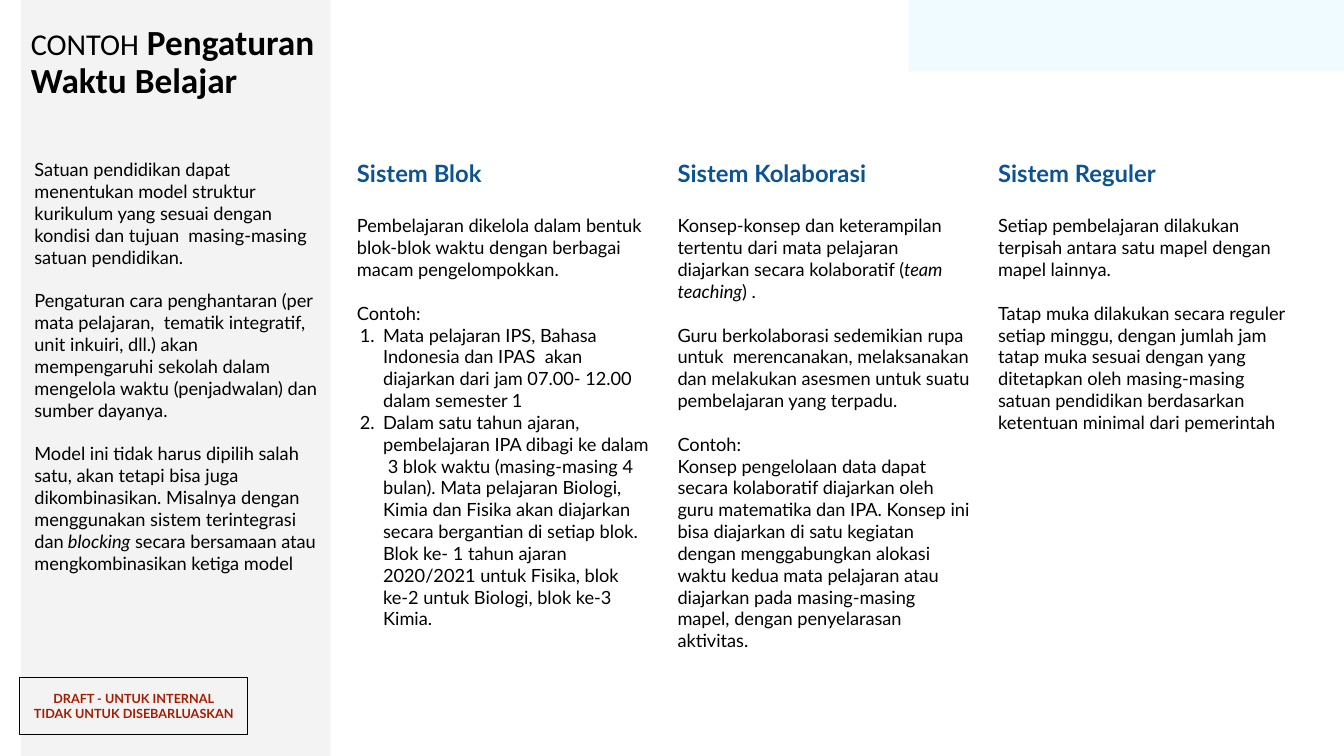
from lxml.etree import SubElement
from pptx import Presentation
from pptx.dml.color import RGBColor
from pptx.enum.shapes import MSO_SHAPE
from pptx.enum.text import MSO_ANCHOR, PP_ALIGN
from pptx.oxml.ns import qn
from pptx.util import Pt

BLACK, BLUE, RED = "000000", "0B5394", "A61C00"
INSET = 9.6
LINE_GAP = 15.6

INTRODUCTION = [
    ["Satuan pendidikan dapat menentukan model struktur kurikulum yang sesuai dengan "
     "kondisi dan tujuan  masing-masing satuan pendidikan."],
    ["Pengaturan cara penghantaran (per mata pelajaran,  tematik integratif, unit inkuiri, dll.) "
     "akan mempengaruhi sekolah dalam mengelola waktu (penjadwalan) dan sumber dayanya."],
    ["Model ini tidak harus dipilih salah satu, akan tetapi bisa juga dikombinasikan. Misalnya "
     "dengan menggunakan sistem terintegrasi dan* blocking* secara bersamaan atau "
     "mengkombinasikan ketiga model"],
]

# Each system holds groups of paragraphs; a tuple is a numbered list.
SYSTEMS = {
    "Sistem Blok": [
        ["Pembelajaran dikelola dalam bentuk blok-blok waktu dengan berbagai macam "
         "pengelompokkan."],
        ["Contoh:",
         ("Mata pelajaran IPS, Bahasa Indonesia dan IPAS  akan diajarkan dari jam 07.00- 12.00 "
          "dalam semester 1",
          "Dalam satu tahun ajaran, pembelajaran IPA dibagi ke dalam  3 blok waktu "
          "(masing-masing 4 bulan). Mata pelajaran Biologi, Kimia dan Fisika akan diajarkan "
          "secara bergantian di setiap blok. Blok ke- 1 tahun ajaran 2020/2021 untuk Fisika, "
          "blok ke-2 untuk Biologi, blok ke-3 Kimia.")],
    ],
    "Sistem Kolaborasi": [
        ["Konsep-konsep dan keterampilan  tertentu dari mata pelajaran diajarkan secara "
         "kolaboratif (*team teaching*) ."],
        ["Guru berkolaborasi sedemikian rupa untuk  merencanakan, melaksanakan dan melakukan "
         "asesmen untuk suatu pembelajaran yang terpadu."],
        ["Contoh:",
         "Konsep pengelolaan data dapat secara kolaboratif diajarkan oleh guru matematika dan "
         "IPA. Konsep ini bisa diajarkan di satu kegiatan dengan menggabungkan alokasi waktu "
         "kedua mata pelajaran atau diajarkan pada masing-masing mapel, dengan penyelarasan "
         "aktivitas."],
    ],
    "Sistem Reguler": [
        ["Setiap pembelajaran dilakukan terpisah antara satu mapel dengan mapel lainnya."],
        ["Tatap muka dilakukan secara reguler setiap minggu, dengan jumlah jam tatap muka sesuai "
         "dengan yang ditetapkan oleh masing-masing satuan pendidikan berdasarkan ketentuan "
         "minimal dari pemerintah"],
    ],
}


def color(value):
    return RGBColor.from_string(value)


def add_number(paragraph):
    properties = paragraph._p.get_or_add_pPr()
    properties.set("marL", str(Pt(18.7)))
    properties.set("indent", str(-Pt(16.6)))
    bullet_color = SubElement(properties, qn("a:buClr"))
    SubElement(bullet_color, qn("a:srgbClr"), val=BLACK)
    SubElement(properties, qn("a:buAutoNum"), type="arabicPeriod")


def write(frame, text, size=13, font="Lato", fill=BLACK, bold=False, align=PP_ALIGN.LEFT,
          gap=0, spacing=None, numbered=False, accent=None):
    """Add a paragraph; parts between asterisks take the accent format (italic by default)."""
    paragraph = frame.paragraphs[0]
    if paragraph.runs:
        paragraph = frame.add_paragraph()
    paragraph.alignment = align
    if gap:
        paragraph.space_before = Pt(gap)
    if spacing:
        paragraph.line_spacing = spacing
    if numbered:
        add_number(paragraph)
    for index, part in enumerate(text.split("*")):
        if not part:
            continue
        run = paragraph.add_run()
        run.text = part
        run.font.name, run.font.size, run.font.bold = font, Pt(size), bold
        run.font.color.rgb = color(fill)
        if index % 2:
            for name, value in (accent or {"italic": True}).items():
                setattr(run.font, name, value)


def write_groups(frame, groups):
    for group_index, group in enumerate(groups):
        for index, entry in enumerate(group):
            numbered = isinstance(entry, tuple)
            gap = LINE_GAP if group_index and not index else 0
            for text in entry if numbered else (entry,):
                write(frame, text, gap=gap, numbered=numbered)


def set_margins(target, horizontal=INSET, vertical=INSET):
    target.margin_left = target.margin_right = Pt(horizontal)
    target.margin_top = target.margin_bottom = Pt(vertical)


def add_rectangle(slide, box, fill=None, line=None):
    shape = slide.shapes.add_shape(MSO_SHAPE.RECTANGLE, *map(Pt, box))
    shape.shadow.inherit = False
    if fill:
        shape.fill.solid()
        shape.fill.fore_color.rgb = color(fill)
    else:
        shape.fill.background()
    if line:
        shape.line.color.rgb = color(line)
        shape.line.width = Pt(0.75)
    else:
        shape.line.fill.background()
    return shape


def add_text_frame(slide, box, **margins):
    frame = slide.shapes.add_textbox(*map(Pt, box)).text_frame
    frame.word_wrap = True
    set_margins(frame, **margins)
    return frame


def add_sidebar(slide, left, top, width, height):
    add_rectangle(slide, (left, top, width, height), fill="F3F3F3")
    title = add_text_frame(slide, (left, top + 17, width, 60), horizontal=7.2, vertical=3.6)
    write(title, "CONTOH* Pengaturan Waktu Belajar*", size=21.6, font="Calibri", spacing=0.9,
          accent={"size": Pt(25.2), "bold": True})
    write_groups(add_text_frame(slide, (left, top + 106.4, width, 319)), INTRODUCTION)


def add_systems_table(slide, left, top, width, height):
    header_height = 40.3
    table = slide.shapes.add_table(2, len(SYSTEMS), *map(Pt, (left, top, width, height))).table
    table.first_row = table.horz_banding = False
    table.rows[0].height = Pt(header_height)
    table.rows[1].height = Pt(height - header_height)
    for index, (name, groups) in enumerate(SYSTEMS.items()):
        table.columns[index].width = Pt(width / len(SYSTEMS))
        header, body = table.cell(0, index), table.cell(1, index)
        for cell in (header, body):
            cell.fill.background()
            set_margins(cell)
        write(header.text_frame, name, size=17, fill=BLUE, bold=True)
        write_groups(body.text_frame, groups)


def add_draft_notice(slide, *box):
    frame = add_rectangle(slide, box, line=BLACK).text_frame
    frame.word_wrap = True
    frame.vertical_anchor = MSO_ANCHOR.TOP
    set_margins(frame)
    for text in ("DRAFT - UNTUK INTERNAL", "TIDAK UNTUK DISEBARLUASKAN"):
        write(frame, text, size=9, fill=RED, bold=True, align=PP_ALIGN.CENTER)


def main():
    presentation = Presentation()
    presentation.slide_width, presentation.slide_height = Pt(960), Pt(540)
    slide = presentation.slides.add_slide(presentation.slide_layouts[6])
    add_rectangle(slide, (649, 0, 311, 51), fill="F0FBFF")
    add_sidebar(slide, 15, -2.7, 221, 542.7)
    add_systems_table(slide, 245.4, 103.7, 687, 370)
    add_draft_notice(slide, 14, 483.7, 163, 41)
    presentation.save("out.pptx")


if __name__ == "__main__":
    main()
